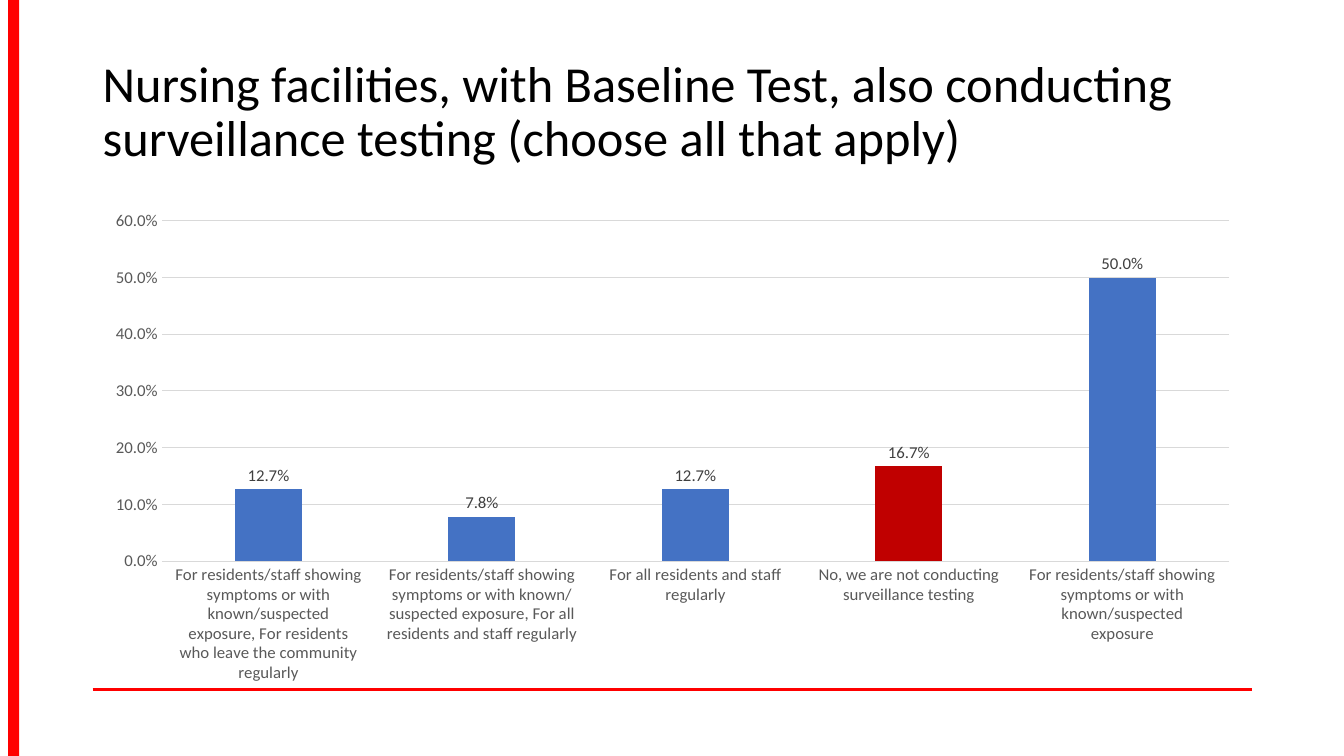
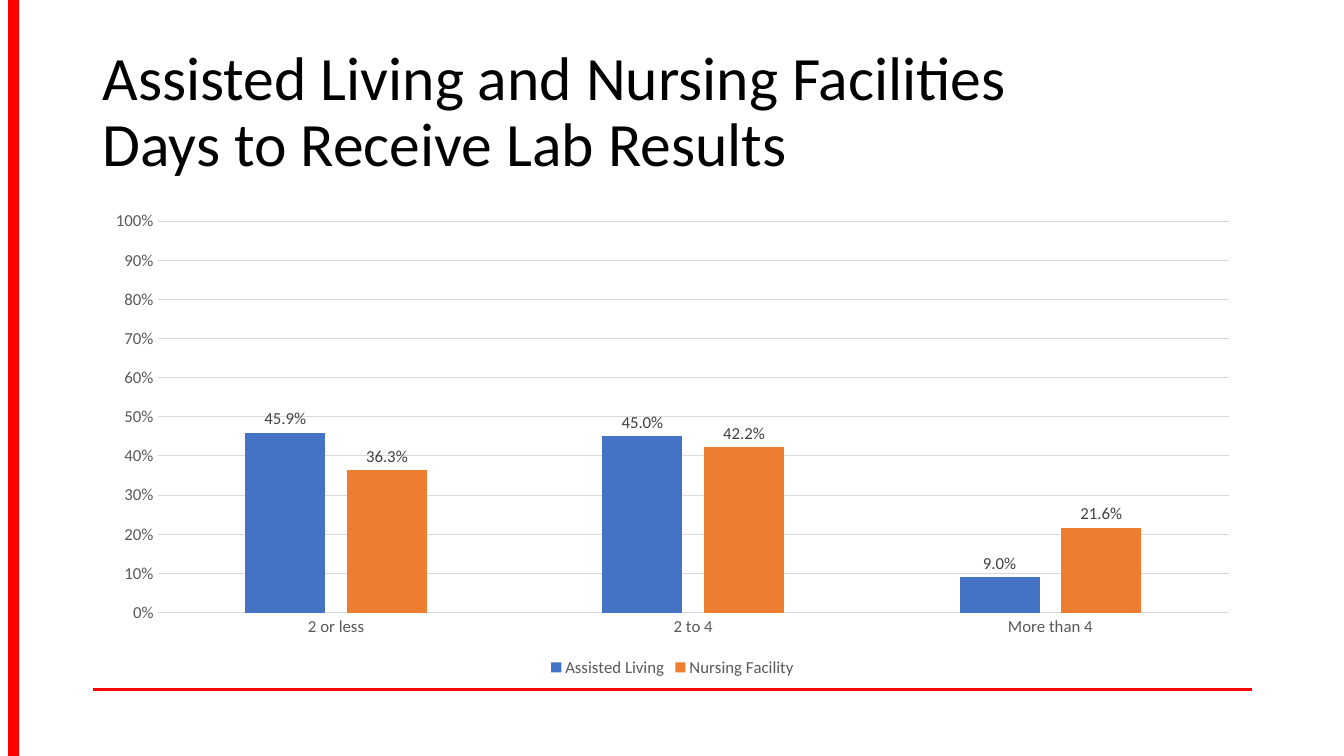
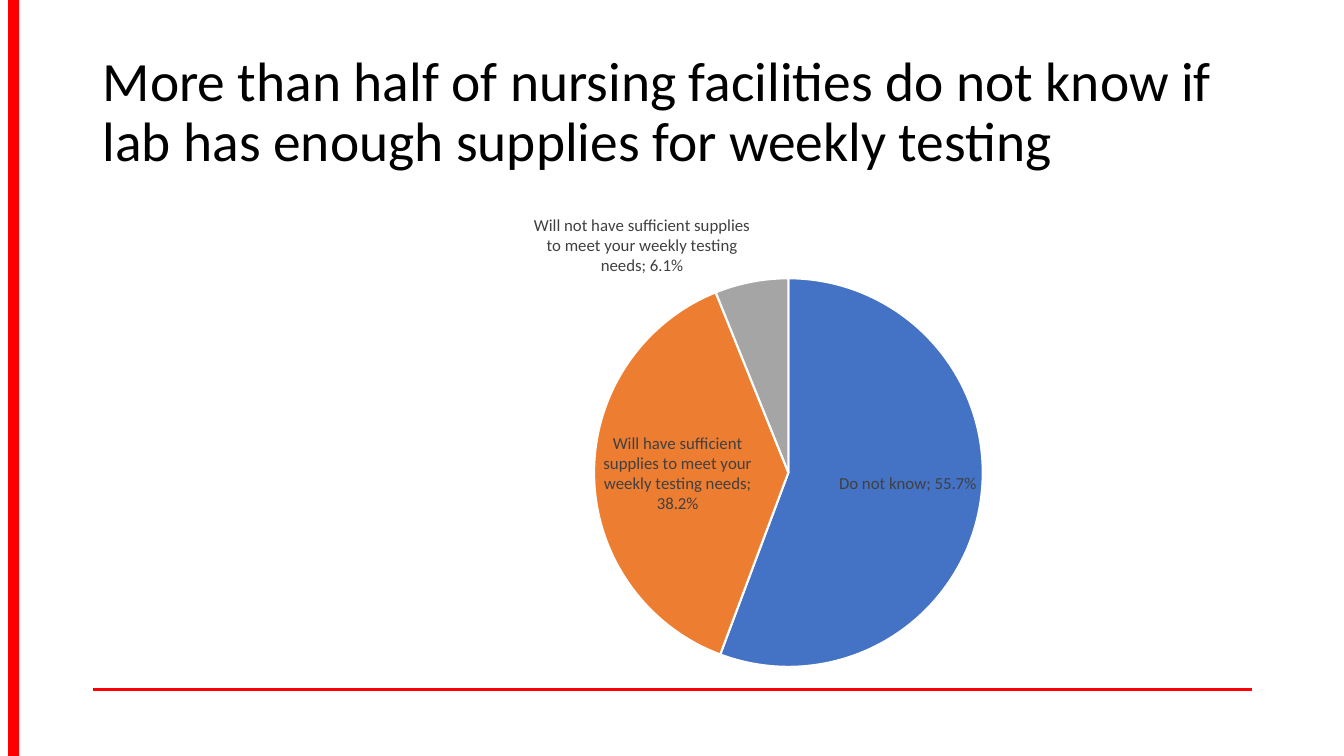
from lxml.etree import SubElement
from pptx import Presentation
from pptx.chart.data import CategoryChartData
from pptx.dml.color import RGBColor
from pptx.enum.chart import XL_CHART_TYPE, XL_LABEL_POSITION, XL_LEGEND_POSITION, XL_TICK_MARK
from pptx.enum.shapes import MSO_CONNECTOR, MSO_SHAPE
from pptx.enum.text import MSO_ANCHOR
from pptx.oxml import parse_xml
from pptx.oxml.ns import nsdecls, qn
from pptx.util import Inches, Pt

HUES = {
    "black": "000000", "white": "FFFFFF", "band": "FF0000", "axis": "595959",
    "label": "404040", "grid": "D9D9D9", "blue": "4472C4",
    "orange": "ED7D31", "gray": "A5A5A5", "red": "C00000",
}
FACE = "Calibri"
LEFT, WIDTH = 0.92, 11.5


def hue(name):
    return RGBColor.from_string(HUES[name])


class Deck:
    def __init__(self):
        self.show = Presentation()
        self.show.slide_width = Inches(13.33)
        self.show.slide_height = Inches(7.5)
        self.slide = None

    def style(self, font, size, color):
        font.name = FACE
        font.size = Pt(size)
        font.color.rgb = hue(color)

    def paint(self, part, color):
        part.format.fill.solid()
        part.format.fill.fore_color.rgb = hue(color)

    def stroke(self, line, color, width):
        line.color.rgb = hue(color)
        line.width = Pt(width)

    def page(self, title, size):
        self.slide = self.show.slides.add_slide(self.show.slide_layouts[6])
        self.rule()
        self.band()
        self.title(title, size)

    def rule(self):
        rule = self.slide.shapes.add_connector(
            MSO_CONNECTOR.STRAIGHT, Inches(LEFT), Inches(6.84),
            Inches(LEFT + WIDTH), Inches(6.84))
        self.stroke(rule.line, "band", 2)
        SubElement(rule._element.spPr, qn("a:effectLst"))

    def band(self):
        band = self.slide.shapes.add_shape(
            MSO_SHAPE.RECTANGLE, Inches(0.08), 0, Inches(0.11), Inches(7.5))
        band.shadow.inherit = False
        band.fill.solid()
        band.fill.fore_color.rgb = hue("band")
        band.line.fill.background()

    def title(self, text, size):
        frame = self.slide.shapes.add_textbox(
            Inches(LEFT), Inches(0.4), Inches(WIDTH), Inches(1.45)).text_frame
        frame.word_wrap = True
        frame.vertical_anchor = MSO_ANCHOR.MIDDLE
        para = frame.paragraphs[0]
        para.text = text
        para.line_spacing = 0.9
        self.style(para.font, size, "black")

    def chart(self, kind, cats, rows):
        data = CategoryChartData(number_format="0.0%")
        data.categories = cats
        for name, vals in rows:
            data.add_series(name, vals)
        chart = self.slide.shapes.add_chart(
            kind, Inches(LEFT), Inches(2), Inches(WIDTH), Inches(4.76), data).chart
        chart.has_title = False
        chart.has_legend = False
        self.style(chart.font, 10, "black")
        return chart

    def labels(self, series, place):
        labels = series.data_labels
        labels.show_value = True
        labels.number_format = "0.0%"
        labels.number_format_is_linked = False
        labels.position = place
        self.style(labels.font, 12, "label")
        return labels

    def columns(self, cats, rows, colors, form, top=None):
        chart = self.chart(XL_CHART_TYPE.COLUMN_CLUSTERED, cats, rows)
        plot = chart.plots[0]
        plot.vary_by_categories = False
        plot.gap_width = 219
        plot.overlap = -27
        for series, color in zip(plot.series, colors):
            self.paint(series, color)
            self.labels(series, XL_LABEL_POSITION.OUTSIDE_END)
        cat, val = chart.category_axis, chart.value_axis
        for axis in (cat, val):
            axis.major_tick_mark = XL_TICK_MARK.NONE
            axis.minor_tick_mark = XL_TICK_MARK.NONE
            self.style(axis.tick_labels.font, 12, "axis")
        self.stroke(cat.format.line, "grid", 0.75)
        val.format.line.fill.background()
        self.stroke(val.major_gridlines.format.line, "grid", 0.75)
        val.tick_labels.number_format = form
        val.tick_labels.number_format_is_linked = False
        if top is not None:
            val.maximum_scale = top
        return chart

    def legend(self, chart):
        chart.has_legend = True
        chart.legend.position = XL_LEGEND_POSITION.BOTTOM
        chart.legend.include_in_layout = False
        self.style(chart.legend.font, 12, "axis")

    def pie(self, cats, row, colors, box):
        chart = self.chart(XL_CHART_TYPE.PIE, cats, [row])
        chart.plots[0].vary_by_categories = True
        series = chart.plots[0].series[0]
        for i, color in enumerate(colors):
            point = series.points[i]
            self.paint(point, color)
            self.stroke(point.format.line, "white", 1.5)
        labels = self.labels(series, XL_LABEL_POSITION.BEST_FIT)
        labels.show_category_name = True
        mark = parse_xml(f'<c:separator {nsdecls("c")}>; </c:separator>')
        labels._element.find(qn("c:showBubbleSize")).addnext(mark)
        self.place(chart, box)

    def place(self, chart, box):
        area = chart._chartSpace.chart.plotArea
        for old in area.findall(qn("c:layout")):
            area.remove(old)
        modes = '<c:layoutTarget val="inner"/><c:xMode val="edge"/><c:yMode val="edge"/>'
        sizes = "".join(f'<c:{key} val="{val}"/>' for key, val in zip("xywh", box))
        area.insert(0, parse_xml(
            f'<c:layout {nsdecls("c")}><c:manualLayout>{modes}{sizes}'
            '</c:manualLayout></c:layout>'))


def main():
    deck = Deck()

    deck.page("Nursing facilities, with Baseline Test, also conducting "
              "surveillance testing (choose all that apply)", 36)
    known = "For residents/staff showing symptoms or with known/suspected exposure"
    everyone = "For all residents and staff regularly"
    chart = deck.columns(
        [f"{known}, For residents who leave the community regularly",
         f"{known}, {everyone}", everyone,
         "No, we are not conducting surveillance testing", known],
        [("Series 1", (0.127, 0.078, 0.127, 0.167, 0.5))], ["blue"], "0.0%")
    deck.paint(chart.plots[0].series[0].points[3], "red")

    deck.page("Assisted Living and Nursing Facilities\vDays to Receive Lab Results", 44)
    chart = deck.columns(
        ["2 or less", "2 to 4", "More than 4"],
        [("Assisted Living", (0.459, 0.45, 0.09)),
         ("Nursing Facility", (0.363, 0.422, 0.216))],
        ["blue", "orange"], "0%", 1)
    deck.legend(chart)

    deck.page("More than half of nursing facilities do not know if lab has "
              "enough supplies for weekly testing", 39.6)
    needs = "sufficient supplies to meet your weekly testing needs"
    deck.pie(["Do not know", f"Will have {needs}", f"Will not have {needs}"],
             ("Series 1", (0.557, 0.382, 0.061)),
             ["blue", "orange", "gray"], (0.43, 0.16, 0.34, 0.81))

    deck.show.save("out.pptx")


if __name__ == "__main__":
    main()
